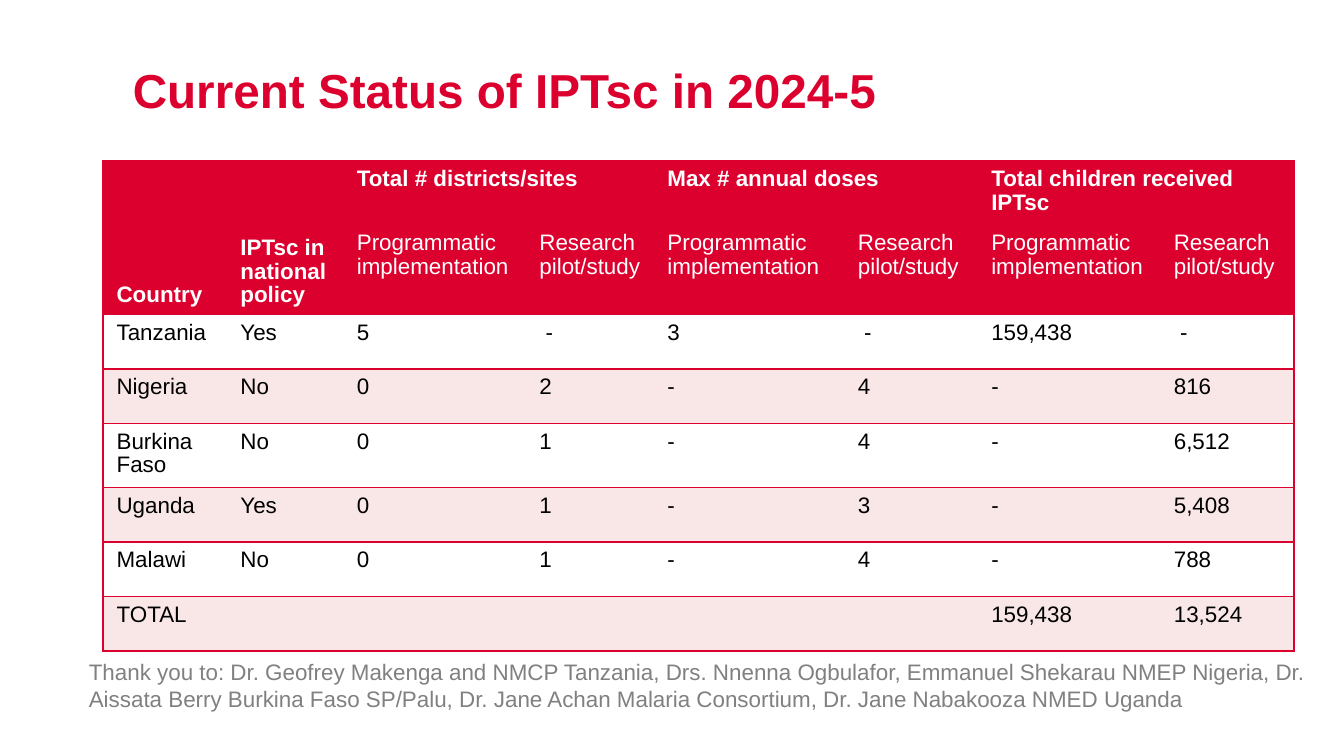
from lxml import etree
from pptx import Presentation
from pptx.dml.color import RGBColor
from pptx.enum.text import MSO_ANCHOR
from pptx.oxml.ns import qn
from pptx.util import Cm, Pt

TOP, MIDDLE, BOTTOM = MSO_ANCHOR.TOP, MSO_ANCHOR.MIDDLE, MSO_ANCHOR.BOTTOM
COLORS = {"red": "DC002E", "white": "FFFFFF", "pink": "F9E7E8",
          "black": "000000", "gray": "808080"}
FORMATS = {
    "title": {"name": "Arial", "size": Pt(25.5), "bold": True},
    "group": {"name": "Arial", "size": Pt(12), "bold": True},
    "body": {"name": "Arial", "size": Pt(12), "bold": False},
}


def write(frame, text, style, color):
    run = frame.paragraphs[0].add_run()
    run.text = text
    for attribute, value in FORMATS[style].items():
        setattr(run.font, attribute, value)
    run.font.color.rgb = RGBColor.from_string(COLORS[color])


def add_border(cell, side, visible):
    line = etree.SubElement(cell._tc.get_or_add_tcPr(), qn(f"a:ln{side}"), w=str(Pt(1)))
    if visible:
        fill = etree.SubElement(line, qn("a:solidFill"))
        etree.SubElement(fill, qn("a:srgbClr"), val=COLORS["red"])
    else:
        etree.SubElement(line, qn("a:noFill"))


deck = Presentation()
deck.slide_width, deck.slide_height = Cm(25.4), Cm(14.28)
slide = deck.slides.add_slide(deck.slide_layouts[6])

# Title
title = slide.shapes.add_textbox(Cm(2.26), Cm(1.2), Cm(21.9), Cm(1.1)).text_frame
title.word_wrap = True
title.vertical_anchor = MIDDLE
title.paragraphs[0].line_spacing = 0.9
write(title, "Current Status of IPTsc in 2024-5", "title", "red")

# Table content
measures = ["Programmatic implementation", "Research pilot/study"]
status_rows = [
    ["Country", "IPTsc in national policy", "Total # districts/sites", "",
     "Max # annual doses", "", "Total children received IPTsc", ""],
    ["", ""] + measures * 3,
    ["Tanzania", "Yes", "5", " -", "3", " -", "159,438", " -"],
    ["Nigeria", "No", "0", "2", "-", "4", "-", "816"],
    ["Burkina Faso", "No", "0", "1", "-", "4", "-", "6,512"],
    ["Uganda", "Yes", "0", "1", "-", "3", "-", "5,408"],
    ["Malawi", "No", "0", "1", "-", "4", "-", "788"],
    ["TOTAL", "", "", "", "", "", "159,438", "13,524"],
]
column_widths = [2.34, 2.2, 3.45, 2.42, 3.6, 2.52, 3.45, 2.53]
header_rows = 2
row_height = 1.03

# Table grid
status = slide.shapes.add_table(
    len(status_rows), len(column_widths), Cm(1.95), Cm(3.04),
    Cm(sum(column_widths)), Cm(row_height * len(status_rows))).table
status.first_row = status.horz_banding = False
for column, width in zip(status.columns, column_widths):
    column.width = Cm(width)
for row in status.rows:
    row.height = Cm(row_height)

# Merged headings
for c in (0, 1):
    status.cell(0, c).merge(status.cell(1, c))
for c in (2, 4, 6):
    status.cell(0, c).merge(status.cell(0, c + 1))

# Cells
for r, values in enumerate(status_rows):
    is_header = r < header_rows
    fill = "red" if is_header else ("pink" if r % 2 else "white")
    for c, value in enumerate(values):
        cell = status.cell(r, c)
        cell.vertical_anchor = BOTTOM if is_header and c < 2 else TOP
        add_border(cell, "L", c == 0)
        add_border(cell, "R", c + cell.span_width == len(values))
        add_border(cell, "T", True)
        add_border(cell, "B", True)
        cell.fill.solid()
        cell.fill.fore_color.rgb = RGBColor.from_string(COLORS[fill])
        cell.text_frame.paragraphs[0].line_spacing = 0.94
        if value:
            write(cell.text_frame, value, "group" if r == 0 else "body",
                  "white" if is_header else "black")

# Acknowledgements
thanks = slide.shapes.add_textbox(Cm(1.43), Cm(12.3), Cm(23.97), Cm(1.28)).text_frame
thanks.word_wrap = True
write(thanks, "Thank you to: Dr. Geofrey Makenga and NMCP Tanzania, Drs. Nnenna Ogbulafor, "
      "Emmanuel Shekarau NMEP Nigeria, Dr. Aissata Berry Burkina Faso SP/Palu, "
      "Dr. Jane Achan Malaria Consortium, Dr. Jane Nabakooza NMED Uganda", "body", "gray")

deck.save("out.pptx")
